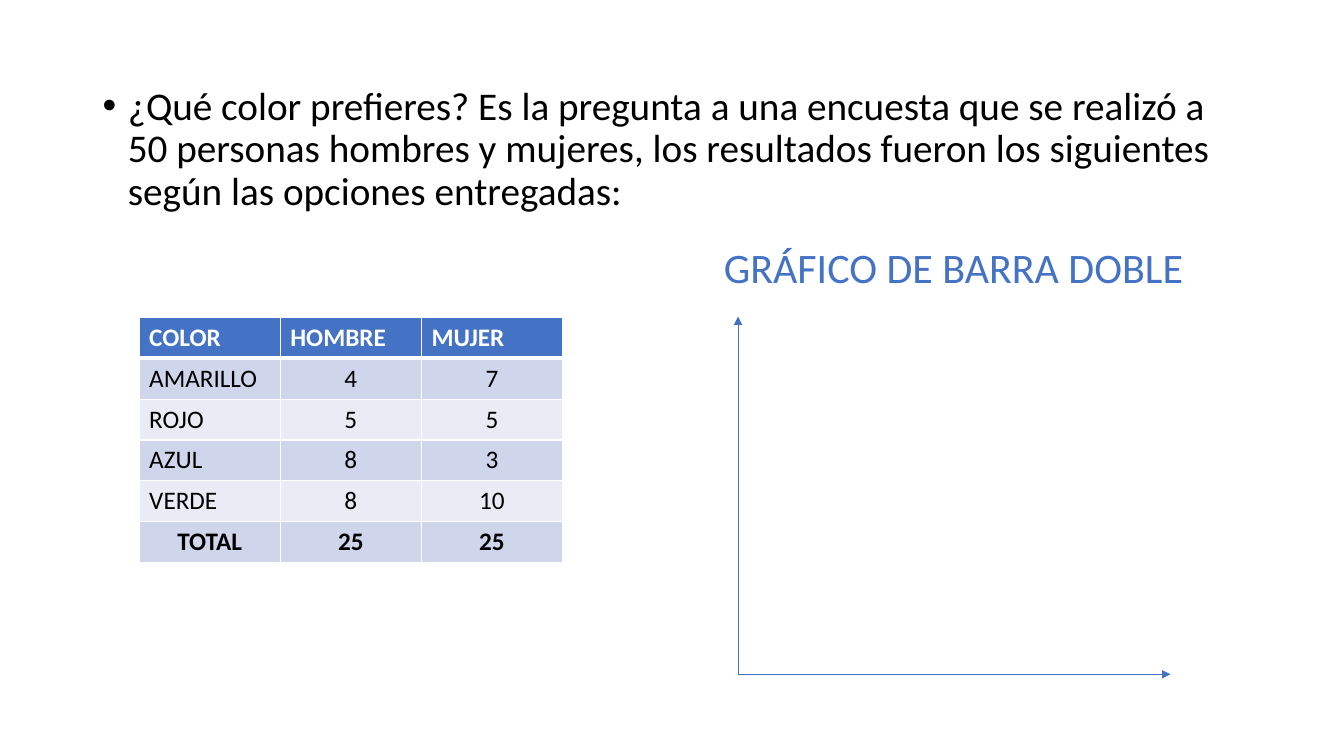
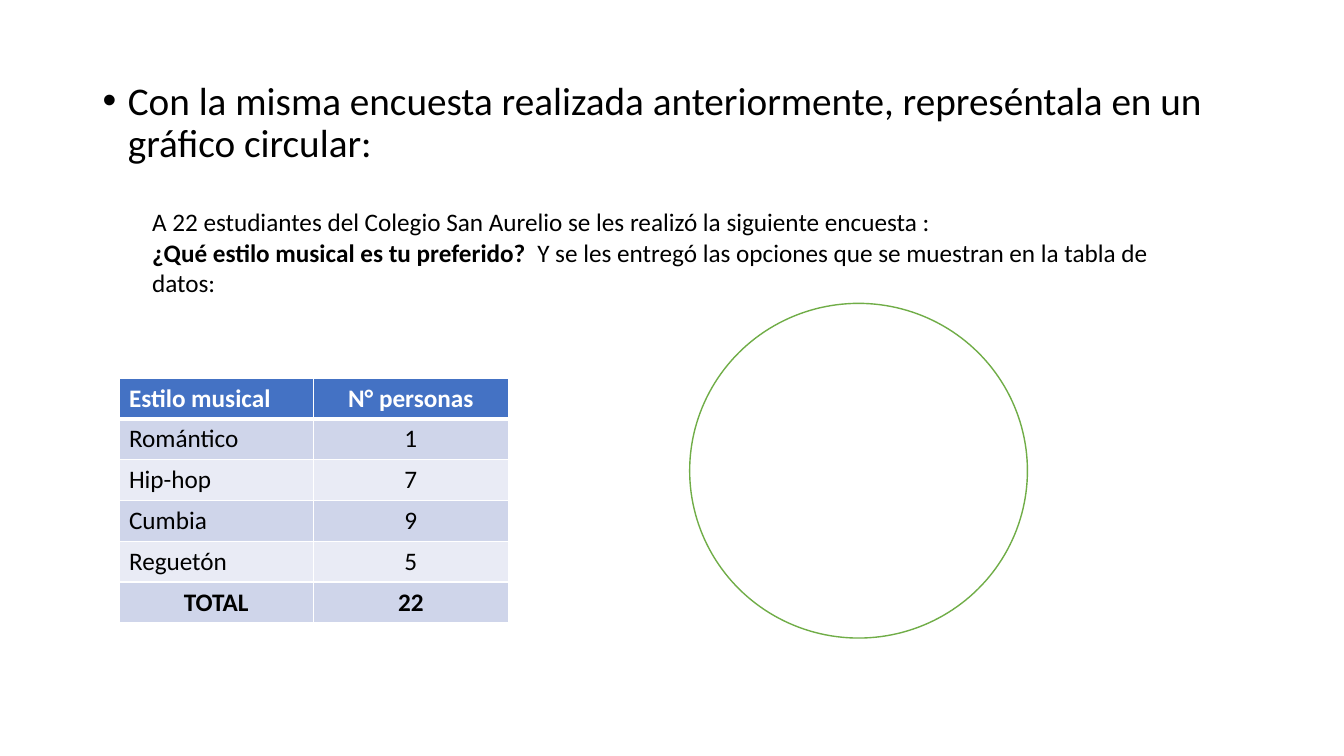
from lxml.etree import SubElement
from pptx import Presentation
from pptx.dml.color import RGBColor
from pptx.enum.shapes import MSO_CONNECTOR as CONNECTOR, MSO_SHAPE as SHAPE
from pptx.enum.text import PP_ALIGN as ALIGN
from pptx.oxml.ns import qn
from pptx.util import Emu, Pt

EMU_PER_PX = 9144
FONT = "Calibri"
BLUE, GREEN, BLACK, WHITE = "4472C4", "70AD47", "000000", "FFFFFF"
BANDS = ("CFD5EA", "E9EBF5")

COLOR_SURVEY = {
    "prompt": "¿Qué color prefieres? Es la pregunta a una encuesta que se realizó a 50 personas "
              "hombres y mujeres, los resultados fueron los siguientes según las opciones entregadas:",
    "prompt_at": (92, 81, 1150, 154),
    "table_at": (138, 315, 420, 243),
    "header_align": (ALIGN.LEFT, ALIGN.LEFT, ALIGN.LEFT),
    "rows": [
        ("COLOR", "HOMBRE", "MUJER"),
        ("AMARILLO", 4, 7),
        ("ROJO", 5, 5),
        ("AZUL", 8, 3),
        ("VERDE", 8, 10),
        ("TOTAL", 25, 25),
    ],
}
MUSIC_SURVEY = {
    "prompt": "Con la misma encuesta realizada anteriormente, represéntala en un gráfico circular:",
    "prompt_at": (92, 76, 1150, 150),
    "table_at": (118, 375, 386, 243),
    "header_align": (ALIGN.LEFT, ALIGN.CENTER),
    "rows": [
        ("Estilo musical", "N° personas"),
        ("Romántico", 1),
        ("Hip-hop", 7),
        ("Cumbia", 9),
        ("Reguetón", 5),
        ("TOTAL", 22),
    ],
}
CHART_TITLE = "GRÁFICO DE BARRA DOBLE"
CHART_TITLE_AT = (706, 235, 480, 61)
AXIS_ORIGIN = (732, 669)
AXIS_ENDS = [(732, 314), (1161, 669)]
MUSIC_INTRO = [
    [("A 22 estudiantes del Colegio San Aurelio se les realizó la siguiente encuesta :", False)],
    [("¿Qué estilo musical es tu preferido?  ", True),
     ("Y se les entregó las opciones que se muestran en la tabla de datos:", False)],
]
MUSIC_INTRO_AT = (141, 200, 1052, 101)
CIRCLE_AT = (684, 301, 335, 332)


def px(*lengths):
    return [Emu(length * EMU_PER_PX) for length in lengths]


def rgb(value):
    return RGBColor.from_string(value)


def write(frame, paragraphs, size=18, color=BLACK, align=None, bullet=False, wrap=True):
    frame.word_wrap = wrap
    for index, spans in enumerate(paragraphs):
        para = frame.add_paragraph() if index else frame.paragraphs[0]
        para.alignment = align
        if bullet:
            para.line_spacing = 0.9
            para.space_before = Pt(10)
            properties = para._p.get_or_add_pPr()
            indent = px(25)[0]
            properties.set("marL", str(indent))
            properties.set("indent", str(-indent))
            SubElement(properties, qn("a:buFont"), typeface="Arial")
            SubElement(properties, qn("a:buChar"), char="•")
        for text, bold in spans:
            span = para.add_run()
            span.text = text
            span.font.name = FONT
            span.font.size = Pt(size)
            span.font.bold = bold
            span.font.color.rgb = rgb(color)


def add_text(page, at, paragraphs, **style):
    box = page.shapes.add_textbox(*px(*at))
    write(box.text_frame, paragraphs, **style)


def set_borders(cell, **widths):
    properties = cell._tc.get_or_add_tcPr()
    for side in "LRTB":
        line = SubElement(properties, qn(f"a:ln{side}"), w=str(Pt(widths.get(side, 1))))
        SubElement(SubElement(line, qn("a:solidFill")), qn("a:srgbClr"), val=WHITE)


def add_survey_table(page, survey):
    rows = survey["rows"]
    table = page.shapes.add_table(len(rows), len(rows[0]), *px(*survey["table_at"])).table
    for r, row in enumerate(rows):
        header, total = r == 0, r == len(rows) - 1
        for c, value in enumerate(row):
            cell = table.cell(r, c)
            set_borders(cell, B=3 if header else 1, T=3 if r == 1 else 1)
            cell.fill.solid()
            cell.fill.fore_color.rgb = rgb(BLUE if header else BANDS[(r - 1) % 2])
            if header:
                align = survey["header_align"][c]
            else:
                align = ALIGN.CENTER if total or c else ALIGN.LEFT
            write(cell.text_frame, [[(str(value), header or total)]],
                  color=WHITE if header else BLACK, align=align)


def add_axes(page):
    group = page.shapes.add_group_shape()
    for end in AXIS_ENDS:
        axis = group.shapes.add_connector(CONNECTOR.STRAIGHT, *px(*AXIS_ORIGIN, *end))
        axis.line.color.rgb = rgb(BLUE)
        axis.line.width = Pt(0.5)
        SubElement(axis.line._get_or_add_ln(), qn("a:tailEnd"), type="triangle")
        SubElement(axis._element.spPr, qn("a:effectLst"))


def add_circle(page):
    circle = page.shapes.add_shape(SHAPE.OVAL, *px(*CIRCLE_AT))
    circle.shadow.inherit = False
    circle.fill.solid()
    circle.fill.fore_color.rgb = rgb(WHITE)
    circle.line.color.rgb = rgb(GREEN)
    circle.line.width = Pt(1)


def add_survey_page(deck, survey):
    page = deck.slides.add_slide(deck.slide_layouts[6])
    add_text(page, survey["prompt_at"], [[(survey["prompt"], False)]], size=28, bullet=True)
    add_survey_table(page, survey)
    return page


def main():
    deck = Presentation()
    deck.slide_width, deck.slide_height = px(1333, 750)

    page = add_survey_page(deck, COLOR_SURVEY)
    add_axes(page)
    add_text(page, CHART_TITLE_AT, [[(CHART_TITLE, False)]],
             size=30, color=BLUE, align=ALIGN.CENTER, wrap=False)

    page = add_survey_page(deck, MUSIC_SURVEY)
    add_text(page, MUSIC_INTRO_AT, MUSIC_INTRO)
    add_circle(page)

    deck.save("out.pptx")


if __name__ == "__main__":
    main()
